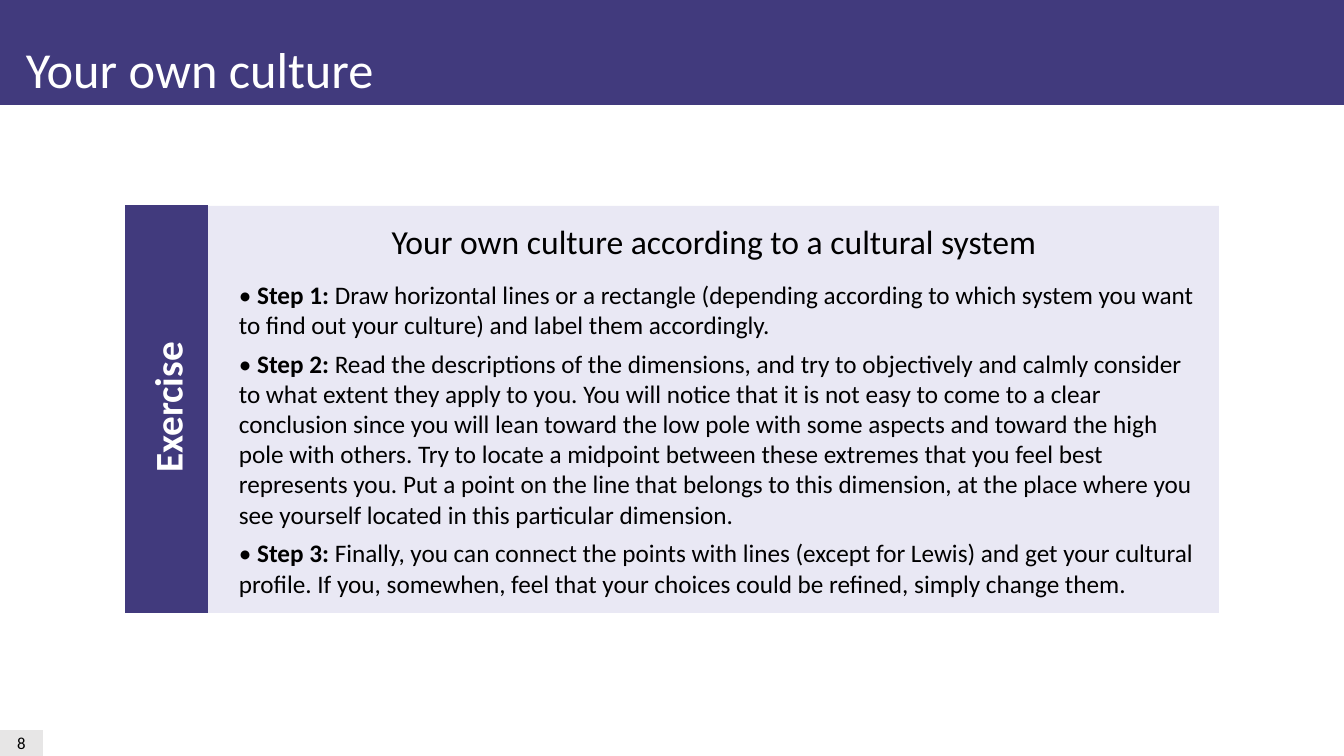
from dataclasses import dataclass

from pptx import Presentation
from pptx import util as u
from pptx.dml.color import RGBColor
from pptx.enum import shapes, text


@dataclass(frozen=True)
class Theme:
    font: str = "Calibri"
    purple: str = "413A7D"
    lilac: str = "E9E8F4"
    grey: str = "E7E6E6"
    black: str = "000000"
    white: str = "FFFFFF"
    title: int = 36
    label: int = 28
    heading: int = 24
    body: int = 18
    small: int = 12


def px(n):
    return u.Emu(round(n * 914400 / 100.8))


class Deck:
    def __init__(self, theme):
        self.theme = theme
        self.prs = Presentation()
        self.prs.slide_width, self.prs.slide_height = px(1344), px(756)
        self.s = self.prs.slides.add_slide(self.prs.slide_layouts[6])

    def style(self, p, size, color, bold=False):
        for r in p.runs:
            r.font.name = self.theme.font
            r.font.size = u.Pt(size)
            r.font.bold = bold
            r.font.color.rgb = RGBColor.from_string(color)

    def rect(self, box, fill):
        sp = self.s.shapes.add_shape(shapes.MSO_SHAPE.RECTANGLE, *map(px, box))
        sp.shadow.inherit = False
        sp.fill.solid()
        sp.fill.fore_color.rgb = RGBColor.from_string(fill)
        sp.line.fill.background()
        return sp

    def textbox(self, box, content, size, color, bold=False, align=None, wrap=True):
        sp = self.s.shapes.add_textbox(*map(px, box))
        tf = sp.text_frame
        tf.word_wrap = wrap
        tf.text = content
        p = tf.paragraphs[0]
        p.alignment = align
        self.style(p, size, color, bold)
        return sp

    def steps(self, box, items):
        """Each item is a step label (or None), its text and the space after it."""
        tf = self.s.shapes.add_textbox(*map(px, box)).text_frame
        tf.word_wrap = True
        for i, (label, content, space) in enumerate(items):
            p = tf.add_paragraph() if i else tf.paragraphs[0]
            p.space_after = u.Pt(space)
            parts = ["• ", f"{label}: ", content] if label else [content]
            for part in parts:
                p.add_run().text = part
            self.style(p, self.theme.body, self.theme.black)
            if label:
                p.runs[1].font.bold = True


STEPS = [
    ("Step 1", "Draw horizontal lines or a rectangle (depending according to which "
     "system you want to find out your culture) and label them accordingly.", 6),
    ("Step 2", "Read the descriptions of the dimensions, and try to objectively and "
     "calmly consider to what extent they apply to you. You will notice that it is not "
     "easy to come to a clear conclusion since you will lean toward the low pole with "
     "some aspects and toward the high", 0),
    (None, "pole with others. Try to locate a midpoint between these extremes that you "
     "feel best represents you. Put a point on the line that belongs to this dimension, "
     "at the place where you see yourself located in this particular dimension.", 6),
    ("Step 3", "Finally, you can connect the points with lines (except for Lewis) and "
     "get your cultural profile. If you, somewhen, feel that your choices could be "
     "refined, simply change them.", 0),
]


def main():
    t = Theme()
    deck = Deck(t)

    # Page number
    page = deck.rect((0, 730, 43, 26), t.grey)
    tf = page.text_frame
    tf.text = "8"
    tf.vertical_anchor = text.MSO_ANCHOR.MIDDLE
    tf.paragraphs[0].alignment = text.PP_ALIGN.CENTER
    deck.style(tf.paragraphs[0], t.small, t.black)

    # Exercise panel
    deck.rect((208, 206, 1011, 407), t.lilac)
    deck.textbox((229, 216, 970, 78), "Your own culture according to a cultural system",
                 t.heading, t.black, align=text.PP_ALIGN.CENTER)
    deck.rect((125, 205, 83, 408), t.purple)
    label = deck.textbox((91, 378, 152, 57), "Exercise", t.label, t.white,
                         bold=True, wrap=False)
    label.rotation = 270

    # Title banner
    deck.rect((0, -1, 1345, 106), t.purple)
    deck.textbox((16, 33, 371, 72), "Your own culture", t.title, t.white, wrap=False)

    # Steps
    deck.steps((229, 274, 978, 333), STEPS)

    deck.prs.save("out.pptx")


if __name__ == "__main__":
    main()
